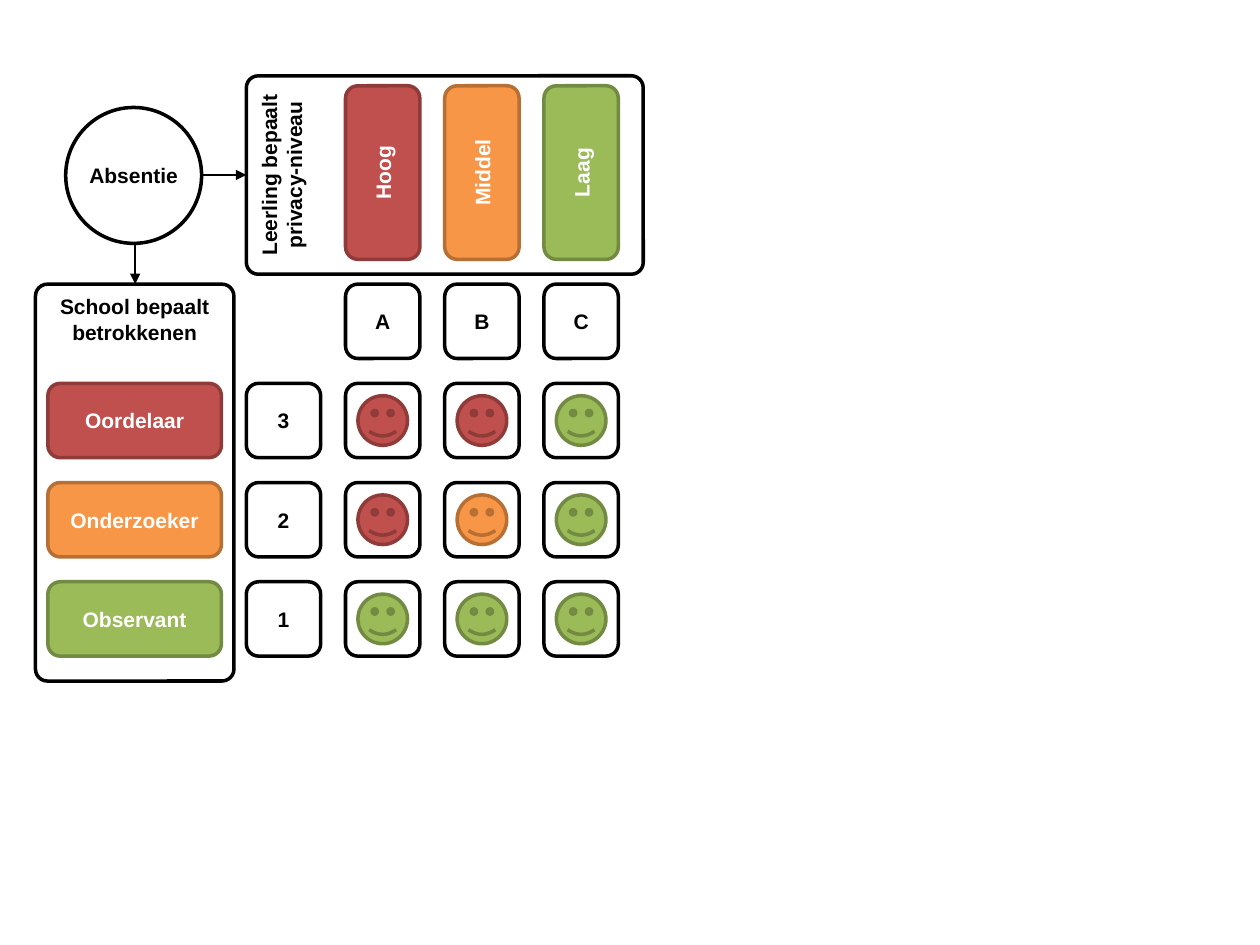
import pptx
import pptx.util
import pptx.dml.color
import pptx.enum.shapes
import pptx.enum.text
import pptx.oxml
import pptx.oxml.ns

theme = {
    "red": ("C0504D", "8E3B39", "FFFFFF"),
    "orange": ("F79646", "B76F34", "FFFFFF"),
    "green": ("9BBB59", "738A42", "FFFFFF"),
    "plain": ("FFFFFF", "000000", "000000"),
    "open": (None, "000000", "000000"),
    "font": "Arial",
    "size": 12,
    "edge": 2,
    "wire": 1.5,
}
step = 3.15 / 4
left, top = 0.38, 0.68
cell, bar, face, ring = 0.75, 1.75, 0.5, 1.37
rgb = pptx.dml.color.RGBColor.from_string
kinds = pptx.enum.shapes.MSO_SHAPE
anchors = pptx.enum.text.MSO_ANCHOR

deck = pptx.Presentation()
deck.slide_width = pptx.util.Inches(10)
deck.slide_height = pptx.util.Inches(7.5)
slide = deck.slides.add_slide(deck.slide_layouts[6])


def place(col, row):
    return pptx.util.Inches(left + col * step), pptx.util.Inches(top + row * step)


def draw(kind, col, row, wide, high, tone, word="", turn=False):
    if turn:
        col, row = col + (wide - high) / 2, row + (high - wide) / 2
        wide, high = high, wide
    fill, edge, ink = theme[tone]
    size = [pptx.util.Inches(n * step) for n in (wide, high)]
    shape = slide.shapes.add_shape(kind, *place(col, row), *size)
    shape.shadow.inherit = False
    shape.rotation = 270 if turn else 0
    if fill:
        shape.fill.solid()
        shape.fill.fore_color.rgb = rgb(fill)
    else:
        shape.fill.background()
    shape.line.color.rgb = rgb(edge)
    shape.line.width = pptx.util.Pt(theme["edge"])
    if word:
        frame = shape.text_frame
        frame.text = word
        frame.word_wrap = True
        frame.vertical_anchor = anchors.MIDDLE if fill else anchors.TOP
        para = frame.paragraphs[0]
        para.alignment = pptx.enum.text.PP_ALIGN.CENTER
        font = para.runs[0].font
        font.name, font.size, font.bold = theme["font"], pptx.util.Pt(theme["size"]), True
        font.color.rgb = rgb(ink)
    return shape


block = kinds.ROUNDED_RECTANGLE
panels = [
    (2, -0.1, 4, 2, "Leerling bepaalt privacy-niveau", True),
    (-0.125, 2, 2, 4, "School bepaalt betrokkenen", False),
]
for col, row, wide, high, word, turn in panels:
    panel = draw(block, col, row, wide, high, "open", word, turn)
    panel.adjustments[0] = 0.06

tones = ["red", "orange", "green"]
roles = ["Oordelaar", "Onderzoeker", "Observant"]
levels = ["Hoog", "Middel", "Laag"]
for spot, (tone, role, level) in enumerate(zip(tones, roles, levels), 3):
    draw(block, 0, spot, bar, cell, tone, role)
    draw(block, spot, 0, cell, bar, tone, level, True)
    draw(block, 2, spot, cell, cell, "plain", "321"[spot - 3])
    draw(block, spot, 2, cell, cell, "plain", "ABC"[spot - 3])

moods = [
    ["red", "red", "green"],
    ["red", "orange", "green"],
    ["green", "green", "green"],
]
gap = (cell - face) / 2
for row, line in enumerate(moods, 3):
    for col, tone in enumerate(line, 3):
        draw(block, col, row, cell, cell, "plain")
        draw(kinds.SMILEY_FACE, col + gap, row + gap, face, face, tone)

start = draw(kinds.OVAL, 0.18, 0.22, ring, ring, "plain", "Absentie")
frame = start.text_frame
frame.margin_left = frame.margin_right = frame.margin_top = frame.margin_bottom = 0

for head, tail in [((1.56, 0.9), (2, 0.9)), ((0.88, 1.59), (0.88, 2))]:
    wire = slide.shapes.add_connector(
        pptx.enum.shapes.MSO_CONNECTOR.STRAIGHT, *place(*head), *place(*tail)
    )
    wire.line.color.rgb = rgb(theme["plain"][1])
    wire.line.width = pptx.util.Pt(theme["wire"])
    props = wire.element.spPr
    tip = pptx.oxml.parse_xml(
        f'<a:tailEnd {pptx.oxml.ns.nsdecls("a")} type="triangle"/>'
    )
    props.find(pptx.oxml.ns.qn("a:ln")).append(tip)
    props.append(pptx.oxml.parse_xml(f'<a:effectLst {pptx.oxml.ns.nsdecls("a")}/>'))

deck.save("out.pptx")
